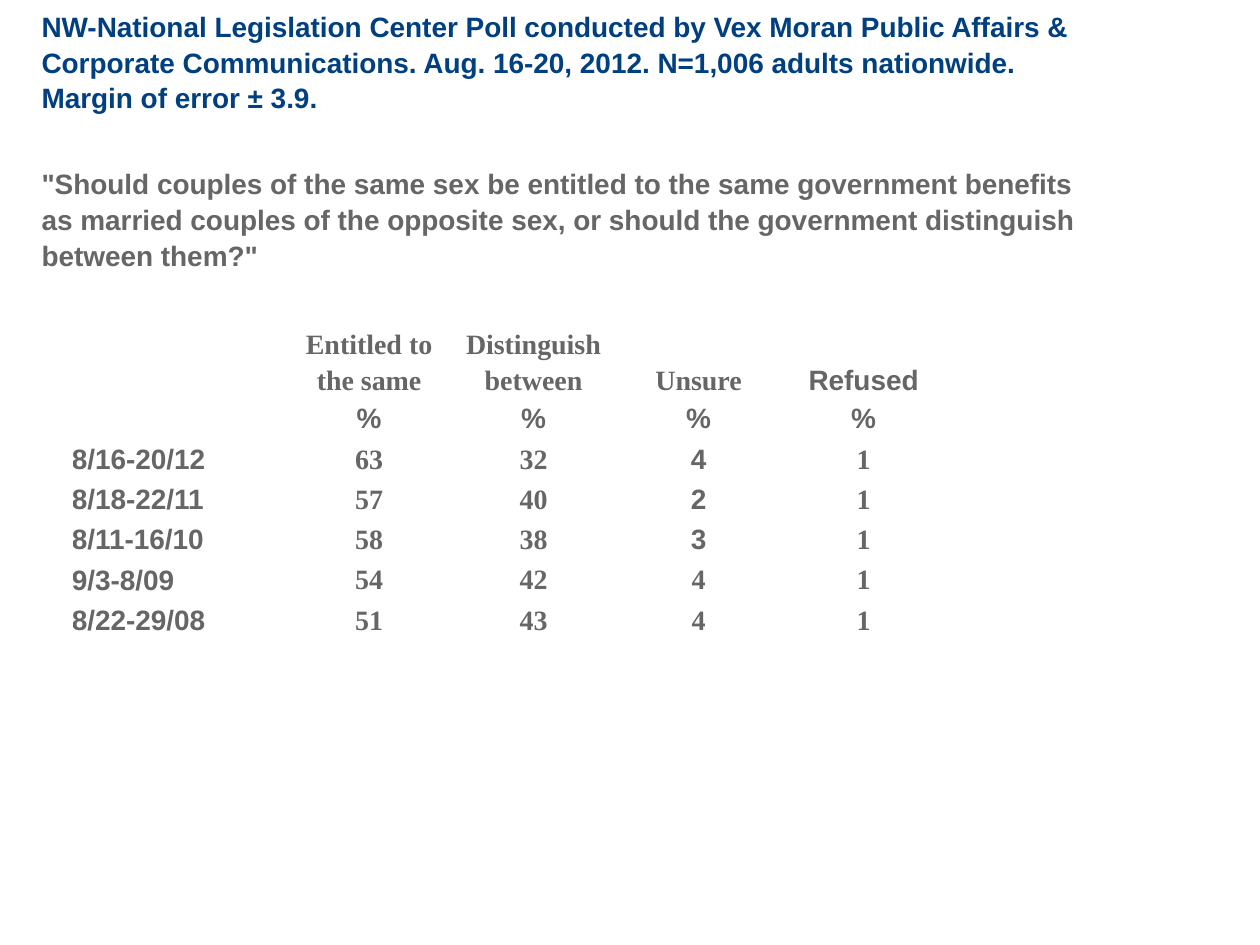
from lxml import etree
from pptx import Presentation
from pptx.dml.color import RGBColor
from pptx.enum.text import MSO_ANCHOR, PP_ALIGN
from pptx.oxml.ns import qn
from pptx.util import Inches, Pt

LEFT, CENTER = PP_ALIGN.LEFT, PP_ALIGN.CENTER
MIDDLE, BOTTOM = MSO_ANCHOR.MIDDLE, MSO_ANCHOR.BOTTOM

NAVY = RGBColor(0x00, 0x40, 0x80)
GRAY = RGBColor(0x66, 0x66, 0x66)
SANS, SERIF = "Arial", "Times New Roman"

COLUMN_WIDTHS = [0.24, 1.71, 1.3] + [1.31] * 4
BANNER_HEIGHTS = [0.97, 0.28, 0.97, 0.28]
HEADER_HEIGHTS = [0.65, 0.32]
FOOTER_HEIGHTS = [0.28, 0.55, 0.28] + [0.32] * 4

SOURCE_ROW, QUESTION_ROW, HEADER_ROW, UNIT_ROW, FIRST_POLL_ROW = 0, 2, 4, 5, 6
DATE_COLUMN, FIRST_ANSWER_COLUMN = 1, 2

SOURCE = (
    "NW-National Legislation Center Poll conducted by Vex Moran Public Affairs & "
    "Corporate Communications. Aug. 16-20, 2012. N=1,006 adults nationwide. "
    "Margin of error ± 3.9."
)
QUESTION = (
    '"Should couples of the same sex be entitled to the same government benefits as '
    "married couples of the opposite sex, or should the government distinguish "
    'between them?"'
)
ANSWERS = [
    ("Entitled to\nthe same", SERIF),
    ("Distinguish\nbetween", SERIF),
    ("Unsure", SERIF),
    ("Refused", SANS),
]
# Date, shares for the four answers, font of the "Unsure" share
POLLS = [
    ("8/16-20/12", (63, 32, 4, 1), SANS),
    ("8/18-22/11", (57, 40, 2, 1), SANS),
    ("8/11-16/10", (58, 38, 3, 1), SANS),
    ("9/3-8/09", (54, 42, 4, 1), SERIF),
    ("8/22-29/08", (51, 43, 4, 1), SERIF),
]
UNSURE_INDEX = 2


def write_cell(cell, text, font=SANS, color=GRAY, align=CENTER, anchor=MIDDLE, space_after=0):
    cell.vertical_anchor = anchor
    paragraph = cell.text_frame.paragraphs[0]
    paragraph.text = text
    paragraph.alignment = align
    paragraph.line_spacing = 1.15
    paragraph.space_after = Pt(space_after)
    for run in paragraph.runs:
        run.font.name = font
        run.font.size = Pt(16)
        run.font.bold = True
        run.font.color.rgb = color


def clear_cell(cell):
    """Remove fill and margins, and keep an empty cell from stretching its row."""
    cell.fill.background()
    cell.margin_left = cell.margin_right = cell.margin_top = cell.margin_bottom = 0
    paragraph = cell.text_frame.paragraphs[0]
    if not paragraph.runs:
        etree.SubElement(paragraph._p, qn("a:endParaRPr"), sz="700")


def add_plain_table(slide, left, top, column_widths, row_heights):
    frame = slide.shapes.add_table(
        len(row_heights), len(column_widths), Inches(left), Inches(top),
        Inches(sum(column_widths)), Inches(sum(row_heights)),
    )
    table = frame.table
    table.first_row = table.horz_banding = False
    for column, width in zip(table.columns, column_widths):
        column.width = Inches(width)
    for row, height in zip(table.rows, row_heights):
        row.height = Inches(height)
    return table


def write_banner(table, row, text, color):
    first = table.cell(row, 0)
    first.merge(table.cell(row, len(table.columns) - 1))
    write_cell(first, text, color=color, align=LEFT, space_after=10)


def write_headers(table):
    for column, (answer, font) in enumerate(ANSWERS, FIRST_ANSWER_COLUMN):
        write_cell(table.cell(HEADER_ROW, column), answer, font=font, anchor=BOTTOM)
        write_cell(table.cell(UNIT_ROW, column), "%")


def write_poll(table, row, date, shares, unsure_font):
    write_cell(table.cell(row, DATE_COLUMN), date, align=LEFT, space_after=10)
    for index, share in enumerate(shares):
        font = unsure_font if index == UNSURE_INDEX else SERIF
        write_cell(table.cell(row, FIRST_ANSWER_COLUMN + index), str(share), font=font)


def main():
    presentation = Presentation()
    presentation.slide_width = Inches(10)
    presentation.slide_height = Inches(7.5)
    blank_layout = presentation.slide_layouts.get_by_name("Blank")
    slide = presentation.slides.add_slide(blank_layout)

    row_heights = BANNER_HEIGHTS + HEADER_HEIGHTS + [0.32] * len(POLLS) + FOOTER_HEIGHTS
    table = add_plain_table(slide, 0.33, 0, COLUMN_WIDTHS, row_heights)
    write_banner(table, SOURCE_ROW, SOURCE, NAVY)
    write_banner(table, QUESTION_ROW, QUESTION, GRAY)
    write_headers(table)
    for row, poll in enumerate(POLLS, FIRST_POLL_ROW):
        write_poll(table, row, *poll)
    for cell in table.iter_cells():
        clear_cell(cell)

    presentation.save("out.pptx")


if __name__ == "__main__":
    main()
